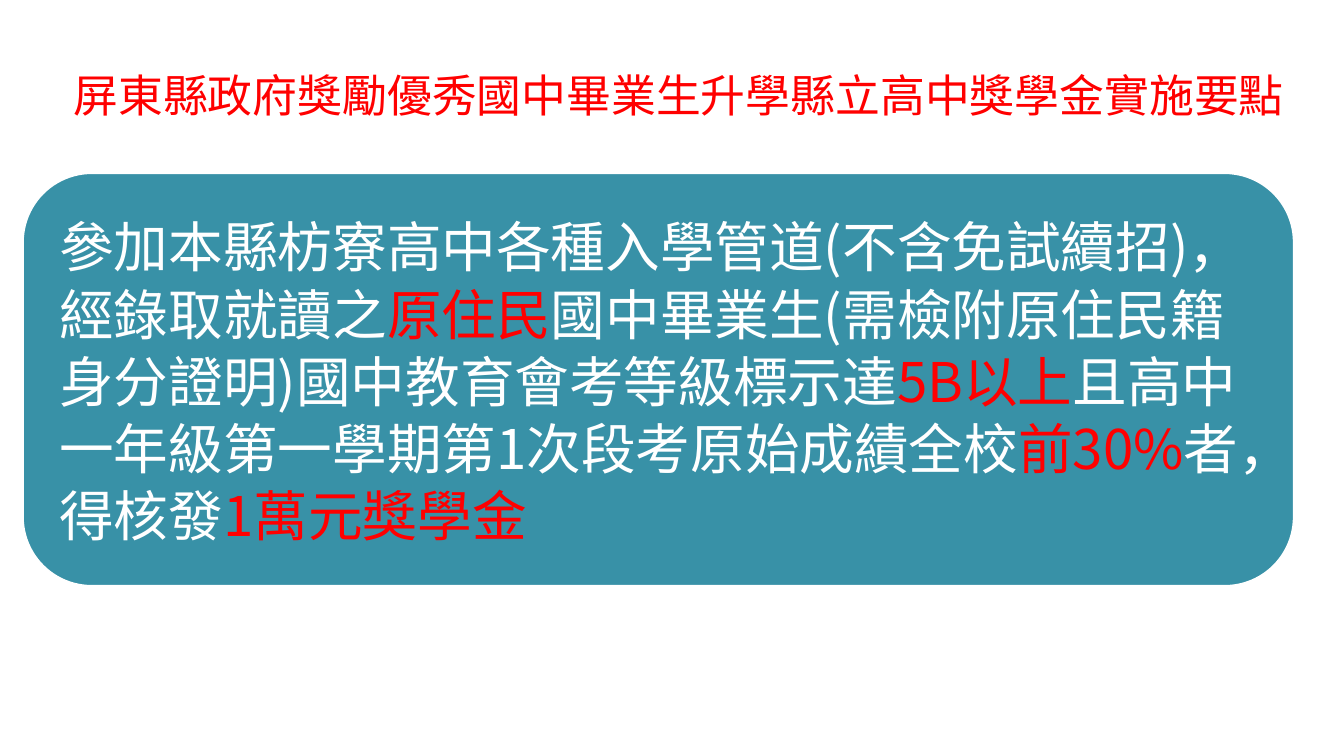
from lxml import etree
from pptx import Presentation
from pptx.dml.color import RGBColor
from pptx.enum.shapes import MSO_SHAPE
from pptx.enum.text import MSO_ANCHOR, PP_ALIGN
from pptx.oxml.ns import qn
from pptx.util import Inches, Pt

FONT = "Noto Sans CJK SC"
RED = "FF0000"
WHITE = "FFFFFF"
TEAL = "3891A7"

TITLE = "屏東縣政府獎勵優秀國中畢業生升學縣立高中獎學金實施要點"
RULE_SPANS = [
    ("參加本縣枋寮高中各種入學管道(不含免試續招)，經錄取就讀之", WHITE),
    ("原住民", RED),
    ("國中畢業生(需檢附原住民籍身分證明)國中教育會考等級標示達", WHITE),
    ("5B以上", RED),
    ("且高中一年級第一學期第1次段考原始成績全校", WHITE),
    ("前30%", RED),
    ("者，得核發", WHITE),
    ("1萬元獎學金", RED),
]


def color(hex_code):
    return RGBColor.from_string(hex_code)


def write_spans(para, spans, size):
    """Fill a paragraph with (text, colour) spans in one font for Latin and Chinese."""
    para.alignment = PP_ALIGN.LEFT
    para.font.size = Pt(size)
    para.font.name = FONT
    latin = para.font._element.find(qn("a:latin"))
    east_asian = etree.Element(qn("a:ea"), typeface=FONT)
    latin.addnext(east_asian)
    for text, hex_code in spans:
        span = para.add_run()
        span.text = text
        span.font.color.rgb = color(hex_code)


def add_title(page):
    box = page.shapes.add_textbox(Inches(0.63), Inches(0.62), Inches(12.6), Inches(0.79))
    box.text_frame.word_wrap = True
    write_spans(box.text_frame.paragraphs[0], [(TITLE, RED)], 32)


def add_rule_card(page):
    card = page.shapes.add_shape(
        MSO_SHAPE.ROUNDED_RECTANGLE, Inches(0.23), Inches(1.72), Inches(12.6), Inches(4.09)
    )
    card.shadow.inherit = False
    card.fill.solid()
    card.fill.fore_color.rgb = color(TEAL)
    card.line.color.rgb = color(WHITE)
    card.line.width = Pt(1)

    frame = card.text_frame
    frame.word_wrap = True
    frame.vertical_anchor = MSO_ANCHOR.MIDDLE
    frame.margin_left = frame.margin_right = Inches(0.16)
    frame.margin_top = frame.margin_bottom = Inches(0.16)
    para = frame.paragraphs[0]
    para.line_spacing = Pt(48)
    write_spans(para, RULE_SPANS, 39)


def main():
    deck = Presentation()
    deck.slide_width = Inches(13.33)
    deck.slide_height = Inches(7.5)
    page = deck.slides.add_slide(deck.slide_layouts[6])
    add_title(page)
    add_rule_card(page)
    deck.save("out.pptx")


if __name__ == "__main__":
    main()
